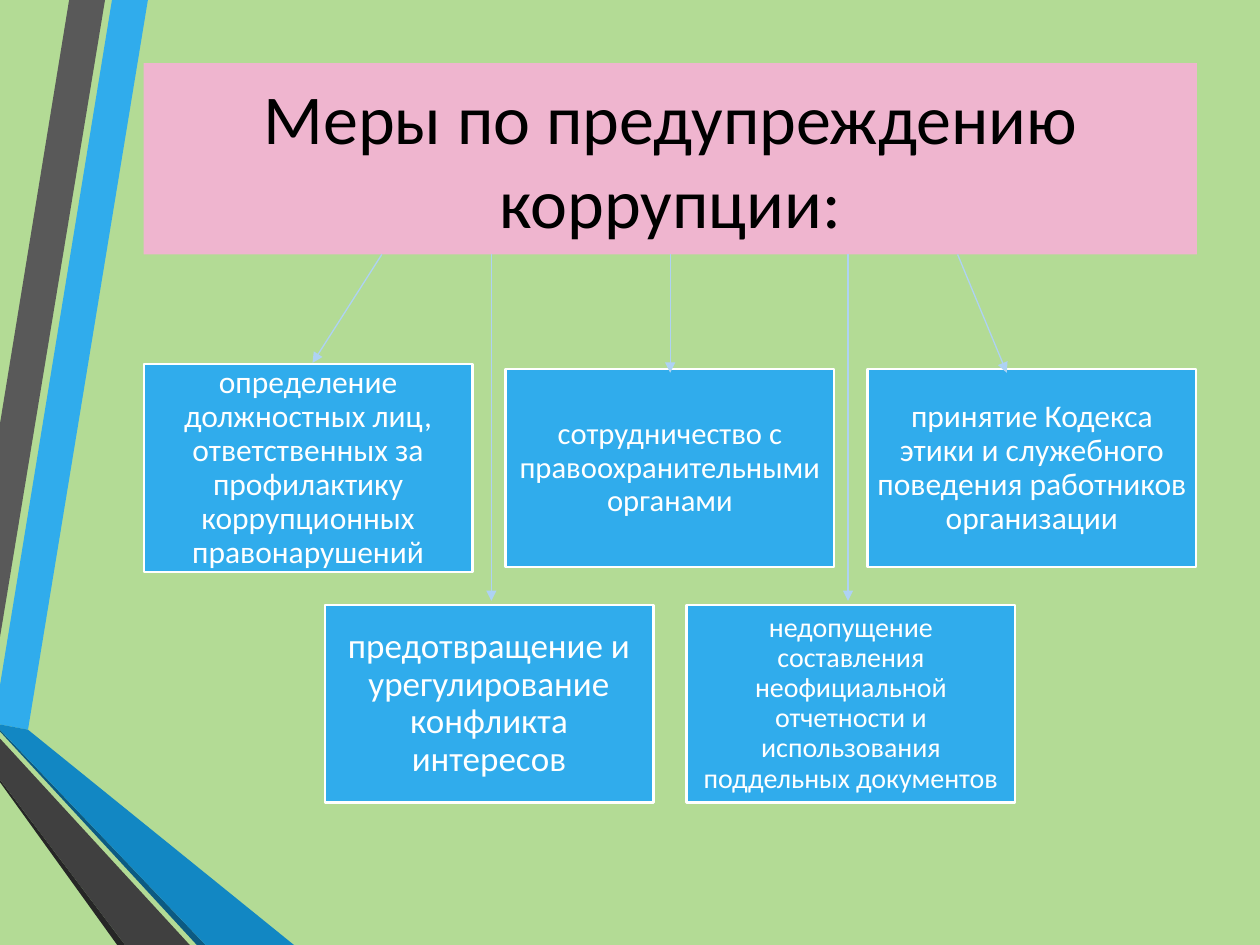
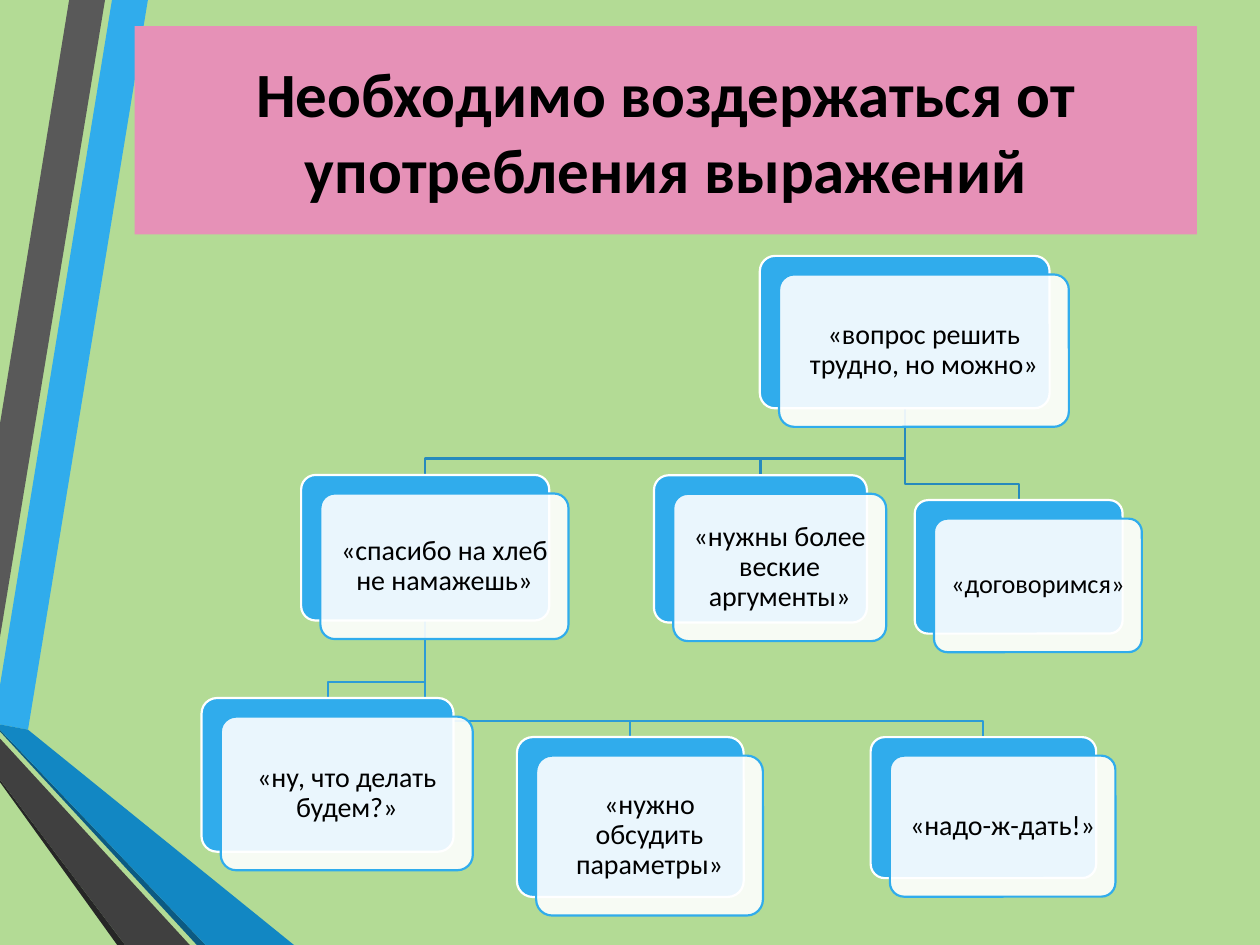
from lxml import etree
from pptx import Presentation
from pptx import util as u
from pptx.dml import color as dml
from pptx.enum import shapes, text
from pptx.oxml import ns

FONT = "Calibri"
BLUE, WHITE, BLACK = "30ACEC", "FFFFFF", "000000"
BACKGROUND, ARROW = "B3DB95", "AED2F4"
LINE_WIDTH = 1.25

# Outlines in points, from back to front
RIBBONS = [
    (BLUE, [(0, 391.5), (0, 414), (16, 417), (84.5, 0), (64, 0)]),
    ("595959", [(60, 0), (39.5, 0), (0, 242), (0, 364)]),
    ("262626", [(0, 445.5), (0, 447), (67, 540), (71.5, 540)]),
    ("0C5A82", [(0, 417), (0, 418), (112.5, 540), (117.5, 540)]),
    ("1287C3", [(0, 417), (117.5, 540), (168, 540), (16, 417), (0, 414)]),
    ("404040", [(0, 445.5), (71.5, 540), (108.5, 540), (0, 422)]),
]

# Column, row, size of text, wording
MEASURES = [
    (0, 0, 18, "определение должностных лиц, ответственных за профилактику "
               "коррупционных правонарушений"),
    (1, 0, 17.5, "сотрудничество с правоохранительными органами"),
    (2, 0, 18, "принятие Кодекса этики и служебного поведения работников организации"),
    (0.5, 1, 20, "предотвращение и урегулирование конфликта интересов"),
    (1.5, 1, 16, "недопущение составления неофициальной отчетности и "
                 "использования поддельных документов"),
]
MEASURE_LEFT, MEASURE_PITCH = 82.1, 206.8
MEASURE_WIDTH, MEASURE_HEIGHT = 187.9, 113
MEASURE_TOPS = (211, 345.6)
TITLE_BOTTOM = 145.4
ARROWS = [  # start x, end x, end y
    (218.2, 178.6, 207.4), (383, 383, 213), (547.2, 575.3, 213),
    (280.8, 280.8, 343.4), (484.6, 484.6, 343.4),
]

# Name: parent, frame of the back card, size of text, wording
PHRASES = {
    "question": (None, (434.2, 146.2, 165.6, 87.1), 16, "«вопрос решить трудно, но можно»"),
    "thanks": ("question", (172.1, 271.4, 141.8, 83.2), 16, "«спасибо на хлеб не намажешь»"),
    "what": ("thanks", (115.2, 398.9, 144, 87.8), 16, "«ну, что делать будем?»"),
    "discuss": ("thanks", (295.4, 421.2, 129.6, 91.4), 16, "«нужно обсудить параметры»"),
    "wait": ("thanks", (497.5, 421.2, 128.9, 80.6), 16, "«надо-ж-дать!»"),
    "arguments": ("question", (373.7, 271.6, 121.7, 84.2), 16, "«нужны более веские аргументы»"),
    "agree": ("question", (522.7, 285.8, 118.8, 76.3), 15, "«договоримся»"),
}
CARD_SHIFT = (11, 10.6)
ELBOW_ABOVE_CHILD = 9.4
LINK_COLOURS = {"question": "268ABD", "thanks": "2C9CD6"}


def points(values):
    return [u.Pt(value) for value in values]


def paint(fill, colour):
    fill.solid()
    fill.fore_color.rgb = dml.RGBColor.from_string(colour)


def draw_line(line, colour, width=LINE_WIDTH):
    paint(line.fill, colour)
    line.width = u.Pt(width)


def set_opacity(shape, percent):
    colour = shape.element.spPr.find(ns.qn("a:solidFill"))[0]
    etree.SubElement(colour, ns.qn("a:alpha"), val=str(percent * 1000))


def write(shape, wording, size, colour, margin=5, spacing=0.9, bold=False):
    """Fill a shape with one centred paragraph."""
    frame = shape.text_frame
    frame_format = {
        "word_wrap": True,
        "auto_size": text.MSO_AUTO_SIZE.NONE,
        "vertical_anchor": text.MSO_ANCHOR.MIDDLE,
    }
    for side in ("left", "right", "top", "bottom"):
        frame_format["margin_" + side] = u.Pt(margin)
    for name, value in frame_format.items():
        setattr(frame, name, value)
    para = frame.paragraphs[0]
    para.alignment = text.PP_ALIGN.CENTER
    para.line_spacing = spacing
    span = para.add_run()
    span.text = wording
    for name, value in {"name": FONT, "size": u.Pt(size), "bold": bold}.items():
        setattr(span.font, name, value)
    paint(span.font.fill, colour)


def add_box(page, kind, frame, fill, outline):
    box = page.shapes.add_shape(kind, *points(frame))
    box.shadow.inherit = False
    paint(box.fill, fill)
    draw_line(box.line, outline)
    return box


def add_outline(page, corners, close):
    start, *rest = [points(corner) for corner in corners]
    builder = page.shapes.build_freeform(*start)
    builder.add_line_segments(rest, close=close)
    outline = builder.convert_to_shape()
    outline.shadow.inherit = False
    return outline


def add_arrow(page, start, end):
    arrow = page.shapes.add_connector(
        shapes.MSO_CONNECTOR.STRAIGHT, *points(start + end))
    draw_line(arrow.line, ARROW, 0.75)
    properties = arrow.element.spPr
    etree.SubElement(properties.find(ns.qn("a:ln")), ns.qn("a:tailEnd"), type="triangle")
    etree.SubElement(properties, ns.qn("a:effectLst"))


def add_link(page, parent, child, colour):
    """Draw an elbow line from the foot of one card to the top of another."""
    left, top, width, height = parent
    start_x, start_y = left + width / 2, top + height
    end_x, end_y = child[0] + child[2] / 2, child[1]
    elbow_y = end_y - ELBOW_ABOVE_CHILD
    link = add_outline(page, [(start_x, start_y), (start_x, elbow_y),
                              (end_x, elbow_y), (end_x, end_y)], close=False)
    link.fill.background()
    draw_line(link.line, colour)


def add_card(page, frame, size, wording):
    """Draw a blue card with a pale card, which holds the text, over it."""
    kind = shapes.MSO_SHAPE.ROUNDED_RECTANGLE
    left, top, width, height = frame
    front_frame = (left + CARD_SHIFT[0], top + CARD_SHIFT[1], width, height)
    back = add_box(page, kind, frame, BLUE, WHITE)
    front = add_box(page, kind, front_frame, WHITE, BLUE)
    for card in (back, front):
        card.adjustments[0] = 0.1
    set_opacity(front, 90)
    write(front, wording, size, BLACK, margin=4.5)


def set_title(page, wording, frame, fill, size, bold=False):
    title = page.shapes.title
    for name, value in zip(("left", "top", "width", "height"), points(frame)):
        setattr(title, name, value)
    paint(title.fill, fill)
    write(title, wording, size, BLACK, spacing=1, bold=bold)


def decorate_layout(layout, page):
    """Build the ribbons on a page and move them to its layout."""
    paint(layout.background.fill, BACKGROUND)
    for colour, corners in RIBBONS:
        ribbon = add_outline(page, corners, close=True)
        paint(ribbon.fill, colour)
        ribbon.line.fill.background()
        layout.element.cSld.spTree.append(ribbon.element)


def fill_measures(page):
    set_title(page, "Меры по предупреждению коррупции:",
              (82.1, 36, 601.9, 109.4), "EFB5CF", 40)
    for column, row, size, wording in MEASURES:
        left, top, height = (MEASURE_LEFT + column * MEASURE_PITCH,
                             MEASURE_TOPS[row], MEASURE_HEIGHT)
        if (column, row) == (0, 0):  # the longest text needs a taller box
            top, height = top - 3, height + 6
        box = add_box(page, shapes.MSO_SHAPE.RECTANGLE,
                      (left, top, MEASURE_WIDTH, height), BLUE, WHITE)
        write(box, wording, size, WHITE)
    for start_x, end_x, end_y in ARROWS:
        add_arrow(page, (start_x, TITLE_BOTTOM), (end_x, end_y))


def fill_phrases(page):
    set_title(page, "Необходимо воздержаться от употребления выражений",
              (77, 15, 607, 119), "E691B7", 36, bold=True)
    for parent, frame, *_ in PHRASES.values():
        if parent:
            add_link(page, PHRASES[parent][1], frame, LINK_COLOURS[parent])
    for _, frame, size, wording in PHRASES.values():
        add_card(page, frame, size, wording)


def main():
    deck = Presentation()
    deck.slide_width, deck.slide_height = points((720, 540))
    layout = deck.slide_layouts.get_by_name("Title Only")
    measures, phrases = [deck.slides.add_slide(layout) for _ in range(2)]
    decorate_layout(layout, measures)
    fill_measures(measures)
    fill_phrases(phrases)
    deck.save("out.pptx")


if __name__ == "__main__":
    main()
